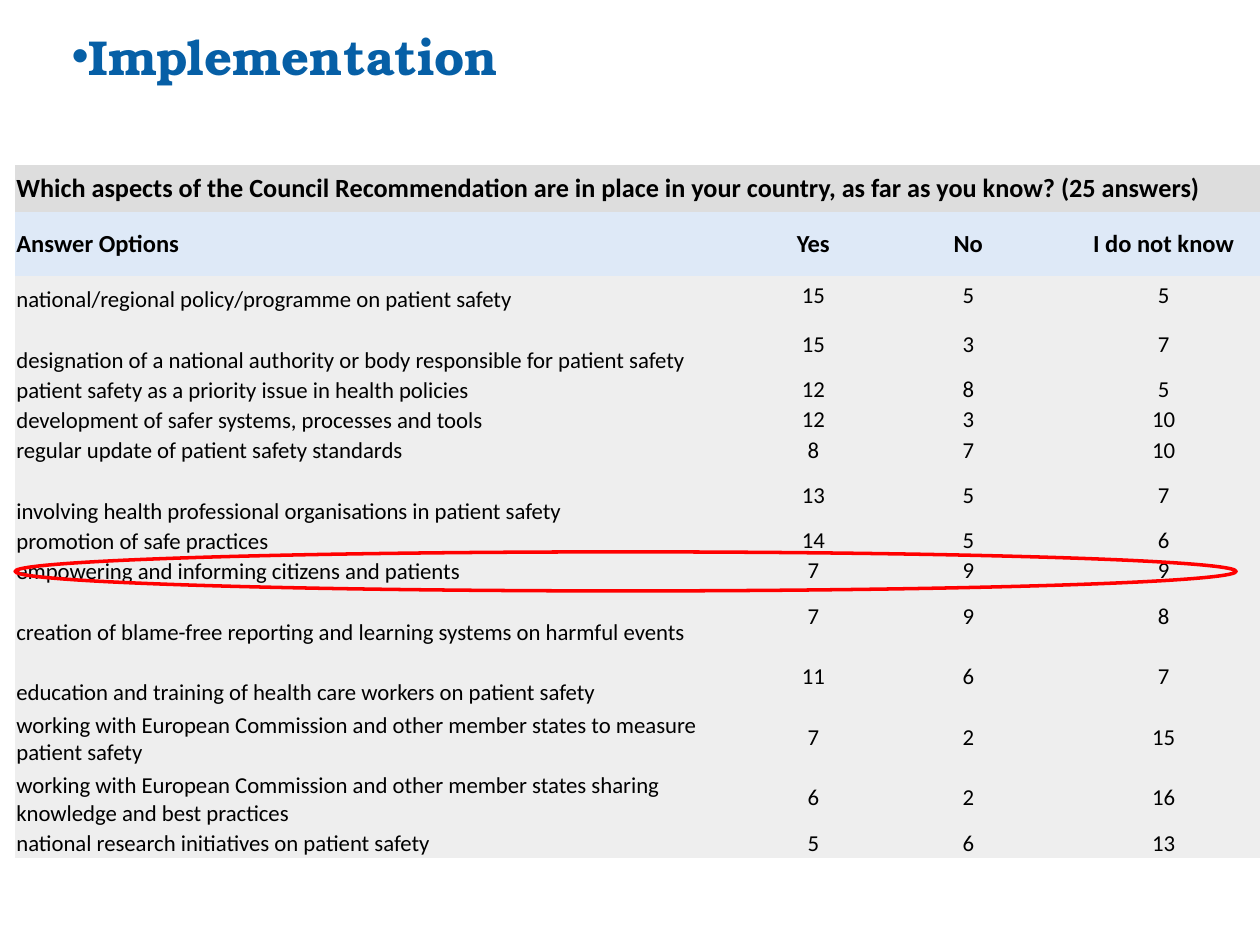
import pptx
import pptx.util
import pptx.dml.color
import pptx.enum.shapes
import pptx.enum.text
import pptx.oxml
import pptx.oxml.ns

RGB = pptx.dml.color.RGBColor
BLUE = RGB(0x06, 0x5F, 0xA6)
BLACK = RGB(0x00, 0x00, 0x00)
RED = RGB(0xFF, 0x00, 0x00)
GREY = RGB(0xDD, 0xDD, 0xDD)
PALE_BLUE = RGB(0xDE, 0xE9, 0xF7)
PALE_GREY = RGB(0xEE, 0xEE, 0xEE)
NO_STYLE = "{2D5ABB26-0587-4C30-8999-92F81FD0307C}"
ANCHOR = pptx.enum.text.MSO_ANCHOR
ALIGN = pptx.enum.text.PP_ALIGN

QUESTION = ("Which aspects of the Council Recommendation are in place in your country, "
            "as far as you know? (25 answers)")
HEADINGS = ("Answer Options", "Yes", "No", "I do not know")
ANSWERS = [
    ("national/regional policy/programme on patient safety", 15, 5, 5),
    ("designation of a national authority or body responsible for patient safety", 15, 3, 7),
    ("patient safety as a priority issue in health policies", 12, 8, 5),
    ("development of safer systems, processes and tools", 12, 3, 10),
    ("regular update of patient safety standards", 8, 7, 10),
    ("involving health professional organisations in patient safety", 13, 5, 7),
    ("promotion of safe practices", 14, 5, 6),
    ("empowering and informing citizens and patients", 7, 9, 9),
    ("creation of blame-free reporting and learning systems on harmful events", 7, 9, 8),
    ("education and training of health care workers on patient safety", 11, 6, 7),
    ("working with European Commission and other member states to measure patient safety", 7, 2, 15),
    ("working with European Commission and other member states sharing knowledge and best practices",
     6, 2, 16),
    ("national research initiatives on patient safety", 5, 6, 13),
]
COLUMNS = (5.88, 0.91, 1.55, 1.55)
LINE = 0.24
ROWS = [0.37, 0.51, 0.3] + [LINE * n for n in (2, 1, 1, 1, 2, 1, 1, 2, 2, 2, 2, 1)]


def write(tf, text, size=13, bold=False, color=BLACK, font="Calibri", align=ALIGN.LEFT, bullet=None):
    p = tf.paragraphs[0]
    if bullet:
        pPr = p._p.get_or_add_pPr()
        pPr.set("marL", "0")
        pPr.set("indent", "0")
        ns = pptx.oxml.ns.nsdecls("a")
        pPr.append(pptx.oxml.parse_xml(f'<a:buFont {ns} typeface="Arial"/>'))
        pPr.append(pptx.oxml.parse_xml(f'<a:buChar {ns} char="{bullet}"/>'))
    p.alignment = align
    r = p.add_run()
    r.text = text
    r.font.name, r.font.size, r.font.bold = font, pptx.util.Pt(size), bold
    r.font.color.rgb = color


class Deck:
    """Hold the presentation, its current slide and the drawing methods."""

    def __init__(self, width, height):
        self.prs = pptx.Presentation()
        self.prs.slide_width = pptx.util.Inches(width)
        self.prs.slide_height = pptx.util.Inches(height)
        self.s = self.prs.slides.add_slide(self.prs.slide_layouts[6])

    def box(self, x, y, w, h):
        width, height = self.prs.slide_width, self.prs.slide_height
        return int(x * width), int(y * height), int(w * width), int(h * height)

    def title(self, text, *share):
        tf = self.s.shapes.add_textbox(*self.box(*share)).text_frame
        tf.word_wrap = True
        write(tf, text, size=28, bold=True, color=BLUE, font="TeX Gyre Bonum", bullet="•")

    def table(self, columns, rows, *share):
        frame = self.s.shapes.add_table(len(rows), len(columns), *self.box(*share))
        table = frame.table
        table.first_row = table.horz_banding = False
        table._tbl.tblPr.find(pptx.oxml.ns.qn("a:tableStyleId")).text = NO_STYLE
        for column, width in zip(table.columns, columns):
            column.width = pptx.util.Inches(width)
        for row, height in zip(table.rows, rows):
            row.height = pptx.util.Inches(height)
        return table

    def cell(self, cell, text, fill, anchor=ANCHOR.MIDDLE, **style):
        cell.margin_left = cell.margin_right = cell.margin_top = pptx.util.Inches(0.01)
        cell.margin_bottom = 0
        cell.vertical_anchor = anchor
        cell.fill.solid()
        cell.fill.fore_color.rgb = fill
        write(cell.text_frame, text, **style)

    def ring(self, *share):
        sp = self.s.shapes.add_shape(pptx.enum.shapes.MSO_SHAPE.OVAL, *self.box(*share))
        sp.shadow.inherit = False
        sp.fill.background()
        sp.line.color.rgb = RED
        sp.line.width = pptx.util.Pt(2)


def main():
    deck = Deck(10, 7.5)
    deck.title("Implementation", 0.047, 0.16 / 7.5, 0.789, 0.63 / 7.5)
    table = deck.table(COLUMNS, ROWS, 0.012, 1.31 / 7.5, 0.988, 5.49 / 7.5)
    table.cell(0, 0).merge(table.cell(0, len(COLUMNS) - 1))
    deck.cell(table.cell(0, 0), QUESTION, GREY, size=15, bold=True)
    for i, record in enumerate([HEADINGS] + ANSWERS, 1):
        heading = i == 1
        for j, value in enumerate(record):
            deck.cell(table.cell(i, j), str(value), PALE_BLUE if heading else PALE_GREY,
                      anchor=ANCHOR.MIDDLE if heading or j else ANCHOR.BOTTOM,
                      size=14 if heading else 13, bold=heading,
                      align=ALIGN.CENTER if j else ALIGN.LEFT)
    deck.ring(0.012, 4.38 / 7.5, 0.969, 0.31 / 7.5)
    deck.prs.save("out.pptx")


if __name__ == "__main__":
    main()
